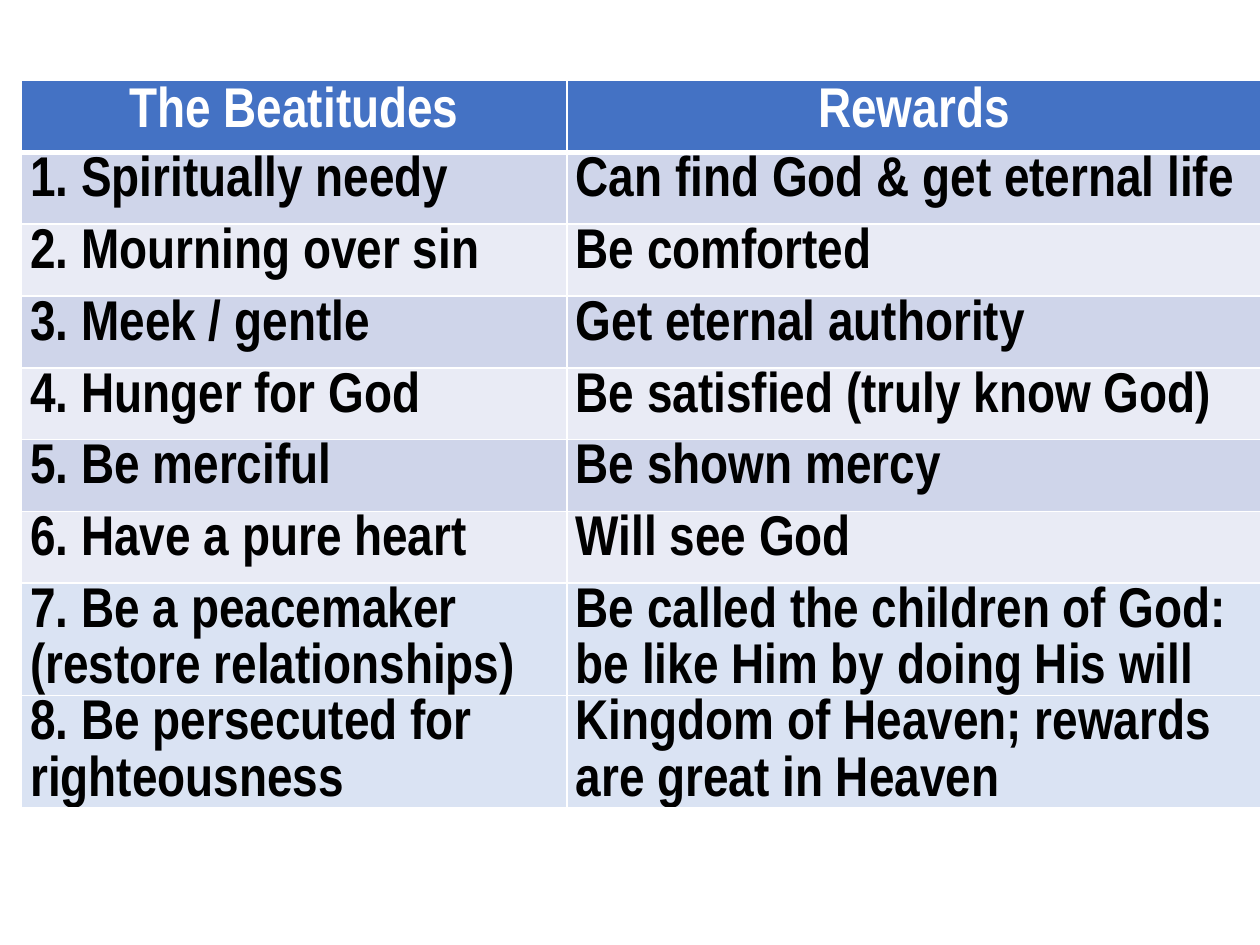
from lxml.etree import SubElement as Sub
from pptx import Presentation
from pptx.dml.color import RGBColor
from pptx.enum.text import PP_ALIGN as Align
from pptx.oxml.ns import qn
from pptx.util import Inches, Pt

WHITE = RGBColor(0xFF, 0xFF, 0xFF)
BLACK = RGBColor(0x00, 0x00, 0x00)
BLUE = RGBColor(0x44, 0x72, 0xC4)
DARK = RGBColor(0xCF, 0xD5, 0xEA)
LIGHT = RGBColor(0xE9, 0xEB, 0xF5)
PALE = RGBColor(0xDA, 0xE3, 0xF3)

HEAD = ("The Beatitudes", "Rewards")
ROWS = [
    ("1. Spiritually needy", "Can find God & get eternal life"),
    ("2. Mourning over sin", "Be comforted"),
    ("3. Meek / gentle", "Get eternal authority"),
    ("4. Hunger for God", "Be satisfied (truly know God)"),
    ("5. Be merciful", "Be shown mercy"),
    ("6. Have a pure heart", "Will see God"),
    ("7. Be a peacemaker (restore relationships)",
     "Be called the children of God: be like Him by doing His will"),
    ("8. Be persecuted for righteousness",
     "Kingdom of Heaven; rewards are great in Heaven"),
]
FILLS = [DARK, LIGHT] * 3 + [PALE] * 2


def write(frame, text, font="Arial Narrow", size=32, color=BLACK,
          align=Align.LEFT, space=None):
    para = frame.paragraphs[0]
    para.alignment = align
    if space:
        para.line_spacing = space
    run = para.add_run()
    run.text = text
    run.font.name = font
    run.font.size = Pt(size)
    run.font.bold = True
    run.font.color.rgb = color


class Deck:
    def __init__(self, wide, high):
        self.show = Presentation()
        self.show.slide_width = Inches(wide)
        self.show.slide_height = Inches(high)
        self.slide = self.show.slides.add_slide(self.show.slide_layouts[6])

    def edge(self, cell, base):
        # Cell borders come before the fill, in schema order
        props = cell._tc.get_or_add_tcPr()
        for spot, side in enumerate("LRTB"):
            width = base if side == "B" else 1
            line = Sub(props, qn(f"a:ln{side}"), w=str(Pt(width)))
            fill = Sub(line, qn("a:solidFill"))
            Sub(fill, qn("a:srgbClr"), val=str(WHITE))
            props.insert(spot, line)

    def cell(self, cell, text, fill, base=1, **form):
        cell.fill.solid()
        cell.fill.fore_color.rgb = fill
        self.edge(cell, base)
        write(cell.text_frame, text, **form)

    def table(self, left, top, cols, high, head, rows, fills):
        count = len(rows) + 1
        grid = self.slide.shapes.add_table(
            count, len(cols), Inches(left), Inches(top),
            Inches(sum(cols)), Inches(high * count)).table
        for col, width in zip(grid.columns, cols):
            col.width = Inches(width)
        for row in grid.rows:
            row.height = Inches(high)
        # Header row
        for i, text in enumerate(head):
            self.cell(grid.cell(0, i), text, BLUE, base=3,
                      color=WHITE, align=Align.CENTER)
        # Body rows
        for r, (row, fill) in enumerate(zip(rows, fills), 1):
            for i, text in enumerate(row):
                cell = grid.cell(r, i)
                cell.margin_left = cell.margin_right = Inches(0.07)
                cell.margin_top = cell.margin_bottom = 0
                self.cell(cell, text, fill, space=1.07)


def main():
    deck = Deck(10, 7.5)
    deck.table(0.17, 0.64, (4.33, 5.51), 0.57, HEAD, ROWS, FILLS)
    deck.show.save("out.pptx")


if __name__ == "__main__":
    main()
